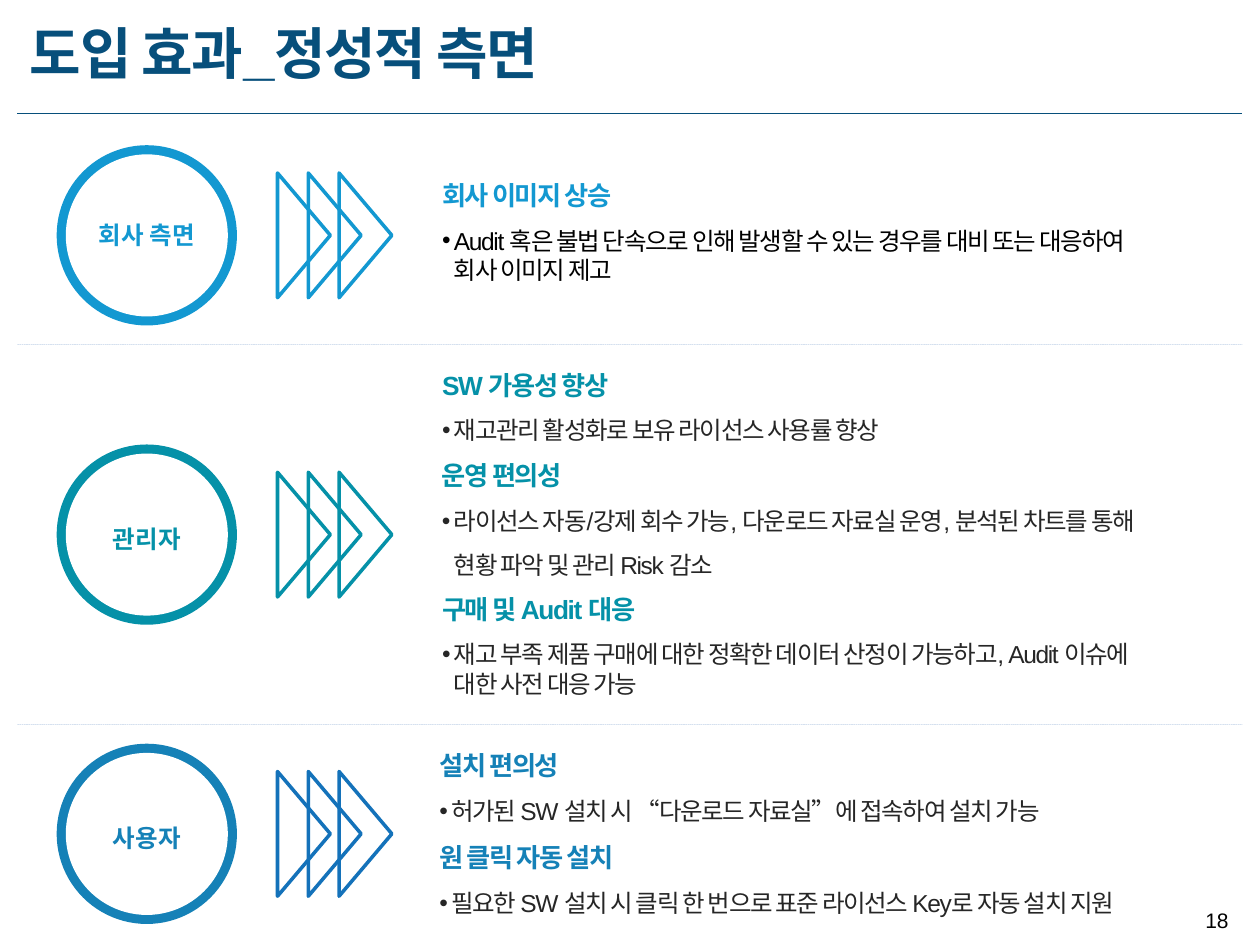
from lxml.etree import SubElement
from pptx import Presentation
from pptx.dml.color import RGBColor
from pptx.enum.dml import MSO_LINE
from pptx.enum.shapes import MSO_CONNECTOR, MSO_SHAPE as Shape
from pptx.enum.text import MSO_ANCHOR as Anchor, PP_ALIGN as Align
from pptx.oxml.ns import qn
from pptx.util import Pt

NAVY = RGBColor(0x07, 0x4F, 0x7B)
SKY = RGBColor(0x13, 0x98, 0xD1)
TEAL = RGBColor(0x05, 0x91, 0xA8)
BLUE = RGBColor(0x15, 0x81, 0xB7)
ARROW_BLUE = RGBColor(0x14, 0x72, 0xBA)
RULE_BLUE = RGBColor(0x4A, 0x7E, 0xBB)
INK = RGBColor(0x26, 0x26, 0x26)
BLACK = RGBColor(0, 0, 0)
WHITE = RGBColor(0xFF, 0xFF, 0xFF)

RULE_LEFT, RULE_RIGHT = 10, 710
RING_LEFT, RING_SIZE, RING_WIDTH = 32.4, 103, 5.2
ARROW_LEFT, ARROW_STEP, ARROW_COUNT = 138, 17.6, 3
ARROW_LENGTH, ARROW_DEPTH = 71.3, 30.2
LABEL_HEIGHT = 24.2


class SlideBuilder:
    font = "Arial"
    tracking = -0.8
    hanging = 6.8

    def __init__(self, page):
        self.page = page

    def text_box(self, left, top, width, height, wrap=False):
        box = self.page.shapes.add_textbox(Pt(left), Pt(top), Pt(width), Pt(height))
        box.text_frame.word_wrap = wrap
        return box.text_frame

    def add_text(self, para, text, size, color, bold=False, tracking=0):
        span = para.add_run()
        span.text = text
        if tracking:
            span._r.get_or_add_rPr().set("spc", str(round(tracking * 100)))
        para.font.name = self.font
        para.font.size = Pt(size)
        para.font.bold = bold
        para.font.color.rgb = color

    def line(self, y, color, width, dash=None, opacity=None):
        rule = self.page.shapes.add_connector(
            MSO_CONNECTOR.STRAIGHT, Pt(RULE_LEFT), Pt(y), Pt(RULE_RIGHT), Pt(y))
        rule.line.color.rgb = color
        rule.line.width = Pt(width)
        properties = rule._element.spPr
        if dash:
            rule.line.dash_style = dash
        if opacity:
            tint = properties.find(".//" + qn("a:srgbClr"))
            SubElement(tint, qn("a:alpha"), val=str(opacity * 1000))
        SubElement(properties, qn("a:effectLst"))

    def shape(self, kind, left, top, width, height, fill=None, outline=None):
        item = self.page.shapes.add_shape(kind, Pt(left), Pt(top), Pt(width), Pt(height))
        item.shadow.inherit = False
        if fill is None:
            item.fill.background()
        else:
            item.fill.solid()
            item.fill.fore_color.rgb = fill
        if outline is None:
            item.line.fill.background()
        else:
            item.line.color.rgb = outline
            item.line.width = Pt(2)
        return item

    def ring(self, top, color):
        for inset, fill in ((0, color), (RING_WIDTH, WHITE)):
            size = RING_SIZE - 2 * inset
            self.shape(Shape.OVAL, RING_LEFT + inset, top + inset, size, size, fill)

    def arrows(self, middle, color):
        for index in range(ARROW_COUNT):
            arrow = self.shape(
                Shape.ISOSCELES_TRIANGLE, ARROW_LEFT + index * ARROW_STEP,
                middle - ARROW_DEPTH / 2, ARROW_LENGTH, ARROW_DEPTH, outline=color)
            arrow.rotation = 90

    def label(self, top, text, color):
        para = self.text_box(RING_LEFT, top, RING_SIZE, LABEL_HEIGHT).paragraphs[0]
        para.alignment = Align.CENTER
        self.add_text(para, text, 14, color, bold=True)

    def benefit(self, left, top, width, height, heading, color, lines,
                ink=INK, heading_spacing=None, last_spacing=1.0):
        frame = self.text_box(left, top, width, height)
        para = frame.paragraphs[0]
        if heading_spacing:
            para.line_spacing = heading_spacing
        self.add_text(para, heading, 15, color, True, self.tracking)
        for index, text in enumerate(lines):
            para = frame.add_paragraph()
            para.line_spacing = 1.5 if index == 0 else last_spacing
            properties = para._p.get_or_add_pPr()
            properties.set("marL", str(Pt(self.hanging)))
            if index == 0:
                properties.set("indent", str(-Pt(self.hanging)))
                SubElement(properties, qn("a:buFont"), typeface=self.font)
                SubElement(properties, qn("a:buChar"), char="•")
            self.add_text(para, text, 14, ink, tracking=self.tracking)


def main():
    deck = Presentation()
    deck.slide_width, deck.slide_height = Pt(720), Pt(540)
    slide = SlideBuilder(deck.slides.add_slide(deck.slide_layouts[6]))

    # Title
    title = slide.text_box(10, 7.2, 332, 46)
    slide.add_text(title.paragraphs[0], "도입 효과_정성적 측면", 32, NAVY, True, slide.tracking)
    slide.line(65, NAVY, 0.75)

    # Viewpoints: ring, label and arrows
    viewpoints = [
        (83, 122.4, "회사 측면", SKY, SKY),
        (254, 296, "관리자", TEAL, TEAL),
        (425, 466.6, "사용자", BLUE, ARROW_BLUE),
    ]
    for top, label_top, text, color, arrow_color in viewpoints:
        slide.arrows(top + RING_SIZE / 2, arrow_color)
        slide.ring(top, color)
        slide.label(label_top, text, color)

    # Company benefits
    slide.benefit(245.5, 103, 458, 64, "회사 이미지 상승", SKY, [
        "Audit 혹은 불법 단속으로 인해 발생할 수 있는 경우를 대비 또는 대응하여",
        "회사 이미지 제고"], ink=BLACK, heading_spacing=Pt(14))

    # Manager benefits
    slide.benefit(245.5, 207.4, 295, 51, "SW 가용성 향상", TEAL, [
        "재고관리 활성화로 보유 라이선스 사용률 향상"])
    slide.benefit(245.5, 259.2, 454, 76.3, "운영 편의성", TEAL, [
        "라이선스 자동/강제 회수 가능, 다운로드 자료실 운영, 분석된 차트를 통해",
        "현황 파악 및 관리 Risk 감소"], last_spacing=1.5)
    slide.benefit(245.5, 335.5, 455, 67.7, "구매 및 Audit 대응", TEAL, [
        "재고 부족 제품 구매에 대한 정확한 데이터 산정이 가능하고, Audit 이슈에",
        "대한 사전 대응 가능"])

    # User benefits
    slide.benefit(244, 424.8, 385, 51, "설치 편의성", BLUE, [
        "허가된 SW 설치 시 “다운로드 자료실”에 접속하여 설치 가능"])
    slide.benefit(244, 477.4, 443.5, 51, "원 클릭 자동 설치", BLUE, [
        "필요한 SW 설치 시 클릭 한 번으로 표준 라이선스 Key로 자동 설치 지원"])

    # Dividers
    for y in (197, 414):
        slide.line(y, RULE_BLUE, 0.1, MSO_LINE.LONG_DASH, 65)

    # Page number
    number = slide.text_box(677.5, 511.2, 31.7, 28.8, wrap=True)
    number.vertical_anchor = Anchor.MIDDLE
    number.paragraphs[0].alignment = Align.RIGHT
    slide.add_text(number.paragraphs[0], "18", 12, BLACK)

    deck.save("out.pptx")


if __name__ == "__main__":
    main()
